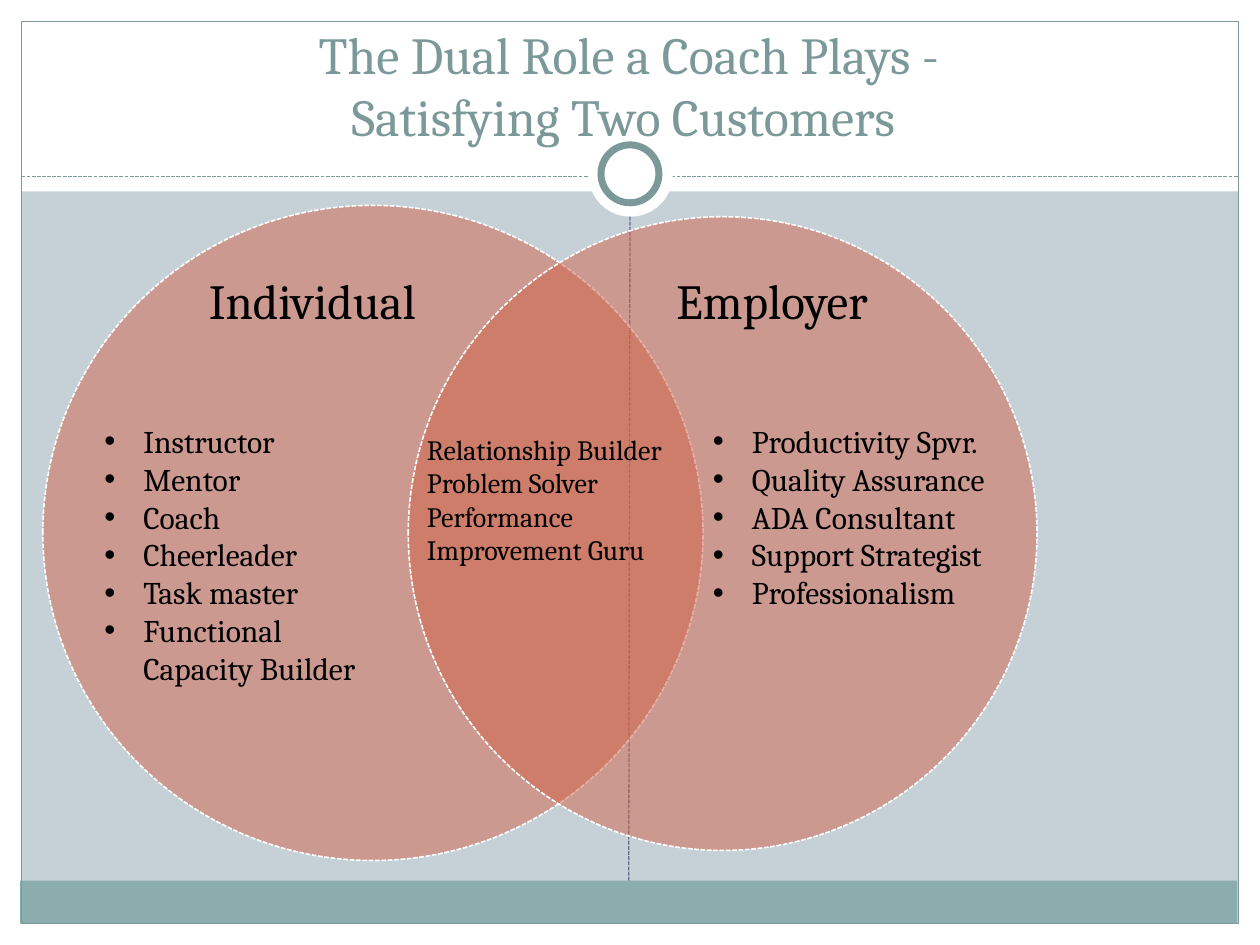
from pptx import Presentation
from pptx.dml.color import RGBColor
from pptx.enum.dml import MSO_LINE
from pptx.enum.shapes import MSO_CONNECTOR, MSO_SHAPE
from pptx.enum.text import MSO_ANCHOR, MSO_AUTO_SIZE, PP_ALIGN
from pptx.oxml.ns import qn
from pptx.util import Inches, Pt
from lxml import etree

RECT, OVAL = MSO_SHAPE.RECTANGLE, MSO_SHAPE.OVAL
LINE = MSO_CONNECTOR.STRAIGHT
DASH = MSO_LINE.SQUARE_DOT
TOP, BOTTOM = MSO_ANCHOR.TOP, MSO_ANCHOR.BOTTOM
LEFT, CENTER = PP_ALIGN.LEFT, PP_ALIGN.CENTER
GROW, FIXED = MSO_AUTO_SIZE.SHAPE_TO_FIT_TEXT, MSO_AUTO_SIZE.NONE

THEME = {
    "font": "Cambria",
    "back": "C5D1D7", "paper": "FFFFFF", "band": "8CADAE",
    "edge": "7C999A", "axis": "646B86", "venn": "D16349", "ink": "000000",
    "title": 29.7, "head": 28, "list": 18, "note": 16,
    "thin": 0.75, "dash": 0.9, "thick": 4,
}

WIDE, HIGH, EDGE = 10, 7.5, 0.17
HEAD, RULE, FOOT = 1.52, 1.4, 6.99
MID = 5

TITLE = "The Dual Role a Coach Plays -\vSatisfying Two Customers "
CIRCLES = [(0.34, 1.63, 5.24, 5.2), (3.24, 1.72, 4.99, 5.03)]
HEADS = [
    ("Individual", (1.56, 2.1, 2, 0.57)),
    ("Employer", (5.27, 2.1, 1.9, 0.57)),
]
SHARED = (
    ["Relationship Builder", "Problem Solver", "Performance Improvement Guru"],
    (3.29, 3.38, 2.33, 1.75),
)
LISTS = [
    (["Instructor", "Mentor", "Coach", "Cheerleader", "Task master",
      "Functional Capacity Builder"], (0.73, 3.3, 2.44, 2.52)),
    (["Productivity Spvr.", "Quality Assurance", "ADA Consultant",
      "Support Strategist", "Professionalism"], (5.56, 3.3, 3.11, 2.22)),
]


def tint(name):
    return RGBColor.from_string(THEME[name])


def box(nums):
    return [Inches(n) for n in nums]


def stroke(line, color, width="thin", dash=None):
    line.color.rgb = tint(color)
    line.width = Pt(THEME[width])
    if dash:
        line.dash_style = dash


def draw(shapes, kind, nums, fill=None, alpha=None, line=None):
    shape = shapes.add_shape(kind, *box(nums))
    shape.shadow.inherit = False
    if fill:
        shape.fill.solid()
        shape.fill.fore_color.rgb = tint(fill)
    else:
        shape.fill.background()
    if alpha:
        color = shape.element.spPr.find(".//" + qn("a:srgbClr"))
        etree.SubElement(color, qn("a:alpha"), val=str(alpha * 1000))
    if line:
        stroke(shape.line, *line)
    else:
        shape.line.fill.background()
    return shape


def join(shapes, ends, color):
    link = shapes.add_connector(LINE, *box(ends))
    stroke(link.line, color, dash=DASH)
    etree.SubElement(link.element.spPr, qn("a:effectLst"))
    return link


def write(shape, rows, size="list", color="ink", align=LEFT, anchor=TOP,
          wrap=True, fit=GROW, bullet=False):
    frame = shape.text_frame
    frame.word_wrap = wrap
    frame.auto_size = fit
    frame.vertical_anchor = anchor
    for i, row in enumerate(rows):
        para = frame.add_paragraph() if i else frame.paragraphs[0]
        para.text = row
        para.alignment = align
        for run in para.runs:
            run.font.name = THEME["font"]
            run.font.size = Pt(THEME[size])
            run.font.color.rgb = tint(color)
        if bullet:
            props = para._p.get_or_add_pPr()
            props.set("marL", str(Inches(0.31)))
            props.set("indent", str(-Inches(0.31)))
            etree.SubElement(props, qn("a:buFont"), typeface="Arial")
            etree.SubElement(props, qn("a:buChar"), char="•")


def frame(shapes):
    for nums in [(0, HIGH - EDGE, WIDE, EDGE), (0, 0, WIDE, HEAD),
                 (0, 0, EDGE, HIGH), (WIDE - EDGE, 0, EDGE, HIGH)]:
        draw(shapes, RECT, nums, "paper")
    inner = WIDE - 2 * EDGE
    band = draw(shapes, RECT, (0.16, FOOT, inner, HIGH - EDGE - FOOT), "band")
    draw(shapes, RECT, (EDGE, EDGE, inner, HIGH - 2 * EDGE), line=("edge",))
    join(shapes, (EDGE, RULE, WIDE - EDGE, RULE), "edge")
    draw(shapes, OVAL, (4.67, 1.05, 0.67, 0.67), "paper")
    draw(shapes, OVAL, (4.77, 1.15, 0.46, 0.46), "paper",
         line=("edge", "thick"))
    axis = join(shapes, (MID, FOOT, MID, 1.72), "axis")
    axis.begin_connect(band, 0)


def main():
    deck = Presentation()
    deck.slide_width, deck.slide_height = box((WIDE, HIGH))
    slide = deck.slides.add_slide(deck.slide_layouts[5])
    shapes = slide.shapes
    slide.background.fill.solid()
    slide.background.fill.fore_color.rgb = tint("back")

    frame(shapes)
    title = shapes.title
    title.left, title.top, title.width, title.height = box(
        (0.33, 0.39, 9.33, 0.83))
    write(title, [TITLE], size="title", color="edge", align=CENTER,
          anchor=BOTTOM, fit=FIXED)
    title.element.getparent().append(title.element)

    venn = shapes.add_group_shape()
    for nums in CIRCLES:
        draw(venn.shapes, OVAL, nums, "venn", alpha=50,
             line=("paper", "dash", DASH))

    for text, nums in HEADS:
        write(shapes.add_textbox(*box(nums)), [text], size="head", wrap=False)
    rows, nums = SHARED
    write(shapes.add_textbox(*box(nums)), rows, size="note")
    for rows, nums in LISTS:
        write(shapes.add_textbox(*box(nums)), rows, bullet=True)

    deck.save("out.pptx")


if __name__ == "__main__":
    main()
